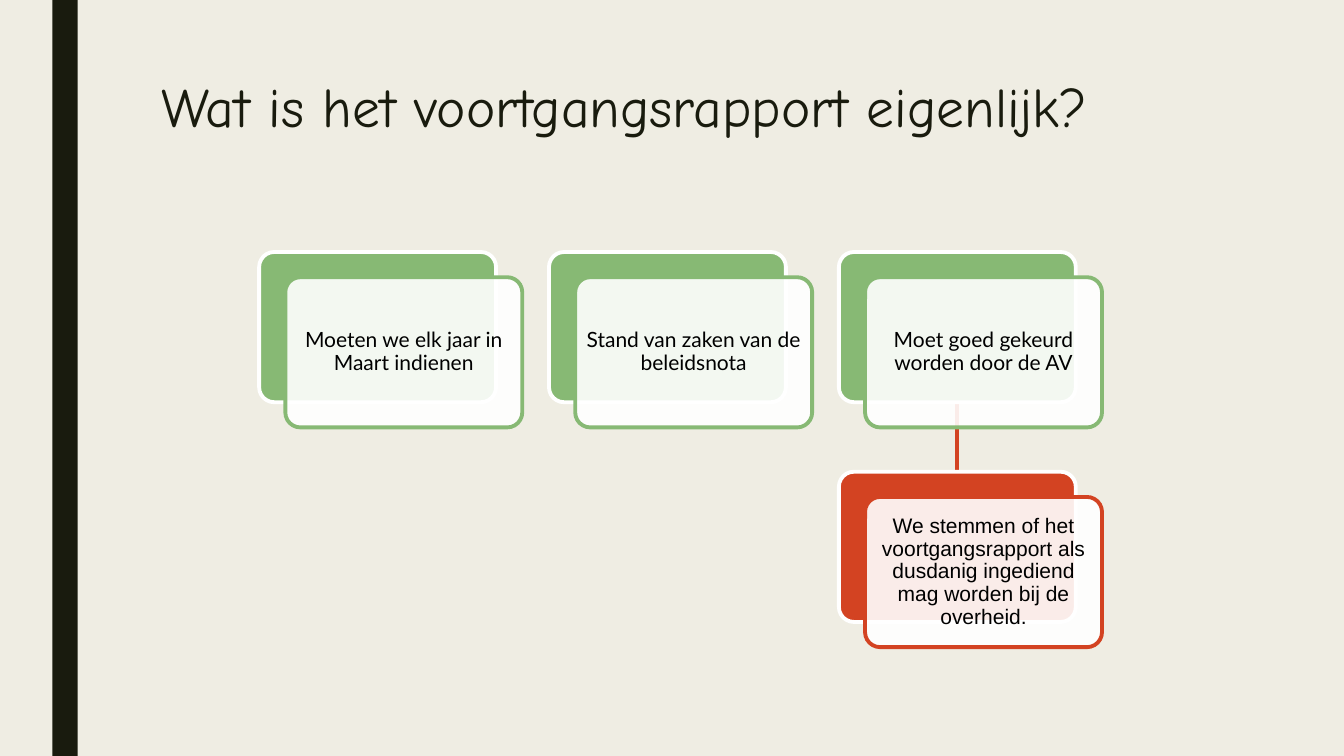
from pptx import Presentation
from pptx.dml.color import RGBColor
from pptx.enum.shapes import MSO_CONNECTOR, MSO_SHAPE
from pptx.enum.text import MSO_ANCHOR, MSO_AUTO_SIZE, PP_ALIGN
from pptx.oxml.ns import qn
from pptx.util import Inches, Pt
from lxml import etree

COLORS = {
    "background": "EFEDE3",
    "dark": "191B0E",
    "green": "87B974",
    "red": "D34322",
    "white": "FFFFFF",
    "black": "000000",
}
CARD_W, CARD_H = 2.35, 1.49
LEFT, TOP = 2.57, 2.5
COL_STEP, ROW_STEP = 2.875, 2.18
SHIFT_X, SHIFT_Y = 0.26, 0.25


def rgb(name):
    return RGBColor.from_string(COLORS[name])


def write(tf, text, font="Lato", size=15, color="black", align=PP_ALIGN.CENTER,
          anchor=MSO_ANCHOR.MIDDLE, spacing=0.9, margins=(0.06, 0.06)):
    tf.word_wrap = True
    tf.auto_size = MSO_AUTO_SIZE.NONE
    tf.vertical_anchor = anchor
    tf.margin_left = tf.margin_right = Inches(margins[0])
    tf.margin_top = tf.margin_bottom = Inches(margins[1])
    p = tf.paragraphs[0]
    p.alignment = align
    p.line_spacing = spacing
    r = p.add_run()
    r.text = text
    r.font.name = font
    r.font.size = Pt(size)
    r.font.color.rgb = rgb(color)


prs = Presentation()
prs.slide_width = Inches(13.33)
prs.slide_height = Inches(7.5)
s = prs.slides.add_slide(prs.slide_layouts[5])
s.background.fill.solid()
s.background.fill.fore_color.rgb = rgb("background")

bar = s.shapes.add_shape(MSO_SHAPE.RECTANGLE, Inches(0.52), 0, Inches(0.25), Inches(7.5))
bar.shadow.inherit = False
bar.fill.solid()
bar.fill.fore_color.rgb = rgb("dark")
bar.line.fill.background()

title = s.shapes.title
title.left, title.top = Inches(1.5), Inches(0.75)
title.width, title.height = Inches(10.5), Inches(1.62)
write(title.text_frame, "Wat is het voortgangsrapport eigenlijk?", font="Comic Neue",
      size=39.6, color="dark", align=PP_ALIGN.LEFT, anchor=MSO_ANCHOR.TOP,
      spacing=0.89, margins=(0.1, 0.05))

link_x = Inches(LEFT + 2 * COL_STEP + CARD_W / 2)
link = s.shapes.add_connector(MSO_CONNECTOR.STRAIGHT, link_x, Inches(TOP + CARD_H),
                              link_x, Inches(TOP + ROW_STEP))
link.line.color.rgb = rgb("red")
link.line.width = Pt(2.75)
etree.SubElement(link._element.spPr, qn("a:effectLst"))

cards = [
    (0, 0, "green", "Lato", "Moeten we elk jaar in Maart indienen"),
    (1, 0, "green", "Lato", "Stand van zaken van de beleidsnota"),
    (2, 0, "green", "Lato", "Moet goed gekeurd worden door de AV"),
    (2, 1, "red", "Arial",
     "We stemmen of het voortgangsrapport als dusdanig ingediend mag worden bij de overheid."),
]
for col, row, color, font, text in cards:
    x, y = LEFT + col * COL_STEP, TOP + row * ROW_STEP
    for dx, dy, fill, line in ((0, 0, color, "white"), (SHIFT_X, SHIFT_Y, "white", color)):
        sp = s.shapes.add_shape(MSO_SHAPE.ROUNDED_RECTANGLE, Inches(x + dx), Inches(y + dy),
                                Inches(CARD_W), Inches(CARD_H))
        sp.shadow.inherit = False
        sp.adjustments[0] = 0.1
        sp.fill.solid()
        sp.fill.fore_color.rgb = rgb(fill)
        sp.line.color.rgb = rgb(line)
        sp.line.width = Pt(2.75)
    fill_color = sp._element.spPr.find(qn("a:solidFill")).find(qn("a:srgbClr"))
    etree.SubElement(fill_color, qn("a:alpha"), val="90000")
    write(sp.text_frame, text, font=font)

prs.save("out.pptx")
